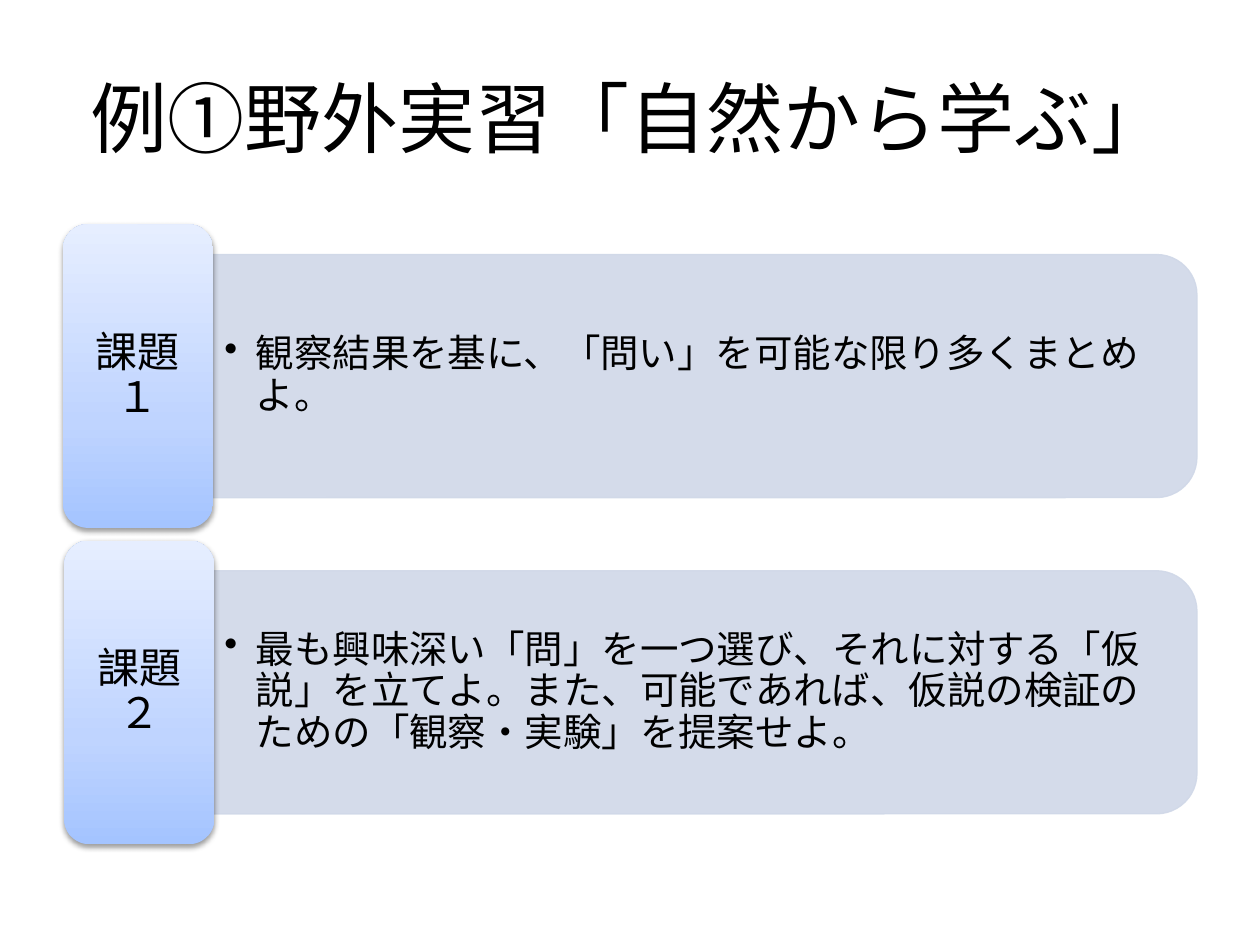
from dataclasses import dataclass

import pptx
import pptx.dml.color
import pptx.enum.shapes
import pptx.enum.text
import pptx.oxml
import pptx.oxml.ns
import pptx.util
from pptx.util import Inches

FONT = "Cabin"
COLORS = {
    "text": "000000",
    "panel": "D0D8E8",
    "tab_bottom": "A4C4FF",
    "tab_middle": "BFD4FF",
    "tab_top": "E6EEFF",
    "shadow": "000000",
}
NS = pptx.oxml.ns.nsdecls("a")
SHAPE = pptx.enum.shapes.MSO_SHAPE
ALIGN = pptx.enum.text.PP_ALIGN
MIDDLE = pptx.enum.text.MSO_ANCHOR.MIDDLE

TAB_W, TAB_H = 1.19, 2.41
PANEL_W, PANEL_H = 7.81, 1.93
PANEL_LEFT = 1.69
FIRST_CENTER, PITCH = 2.985, 2.51


@dataclass
class Task:
    label: str
    body: str
    tab_left: float


TASKS = [
    Task("課題１", "観察結果を基に、「問い」を可能な限り多くまとめよ。", 0.5),
    Task(
        "課題２",
        "最も興味深い「問」を一つ選び、それに対する「仮説」を立てよ。"
        "また、可能であれば、仮説の検証のための「観察・実験」を提案せよ。",
        0.51,
    ),
]


def rgb(name: str) -> pptx.dml.color.RGBColor:
    return pptx.dml.color.RGBColor.from_string(COLORS[name])


def write(sp, text: str, *, size: float, align=ALIGN.LEFT, spacing=None, bullet=False) -> None:
    tf = sp.text_frame
    tf.word_wrap = True
    tf.vertical_anchor = MIDDLE
    p = tf.paragraphs[0]
    p.alignment = align
    p.line_spacing = spacing
    r = p.add_run()
    r.text = text
    r.font.name = FONT
    r.font.size = pptx.util.Pt(size)
    r.font.color.rgb = rgb("text")
    if bullet:
        p.level = 1
        pPr = p._p.get_or_add_pPr()
        pPr.set("marL", str(Inches(0.25)))
        pPr.set("indent", str(-Inches(0.25)))
        pPr.append(pptx.oxml.parse_xml(f'<a:buChar {NS} char="•"/>'))


def add_text(s, left: float, center: float, width: float, height: float, text: str, **fmt):
    sp = s.shapes.add_textbox(
        Inches(left), Inches(center - height / 2), Inches(width), Inches(height)
    )
    write(sp, text, **fmt)
    return sp


def add_panel(s, center: float) -> None:
    """Add a bar rounded at its right end: a top-rounded shape turned by 90 degrees."""
    sp = s.shapes.add_shape(
        SHAPE.ROUND_2_SAME_RECTANGLE,
        Inches(PANEL_LEFT + (PANEL_W - PANEL_H) / 2),
        Inches(center - PANEL_W / 2),
        Inches(PANEL_H),
        Inches(PANEL_W),
    )
    sp.rotation = 90
    sp.shadow.inherit = False
    sp.fill.solid()
    sp.fill.fore_color.rgb = rgb("panel")
    sp.line.color.rgb = rgb("panel")
    sp.line.width = pptx.util.Pt(0.75)
    for color in sp._element.spPr.iter(pptx.oxml.ns.qn("a:srgbClr")):
        color.append(pptx.oxml.parse_xml(f'<a:alpha {NS} val="90000"/>'))


def add_tab(s, left: float, center: float) -> None:
    """Add a rounded tab with a vertical gradient and a soft shadow below."""
    sp = s.shapes.add_shape(
        SHAPE.ROUNDED_RECTANGLE,
        Inches(left), Inches(center - TAB_H / 2), Inches(TAB_W), Inches(TAB_H),
    )
    sp.line.fill.background()
    sp.shadow.inherit = False
    spPr = sp._element.spPr
    stops = "".join(
        f'<a:gs pos="{pos * 1000}"><a:srgbClr val="{COLORS[name]}"/></a:gs>'
        for pos, name in ((0, "tab_bottom"), (35, "tab_middle"), (100, "tab_top"))
    )
    spPr.find(pptx.oxml.ns.qn("a:prstGeom")).addnext(pptx.oxml.parse_xml(
        f'<a:gradFill {NS} rotWithShape="1"><a:gsLst>{stops}</a:gsLst>'
        '<a:lin ang="16200000" scaled="0"/></a:gradFill>'
    ))
    spPr.find(pptx.oxml.ns.qn("a:effectLst")).append(pptx.oxml.parse_xml(
        f'<a:outerShdw {NS} blurRad="{pptx.util.Pt(3.1)}" dist="{pptx.util.Pt(1.6)}" '
        f'dir="5400000" rotWithShape="0"><a:srgbClr val="{COLORS["shadow"]}">'
        '<a:alpha val="38000"/></a:srgbClr></a:outerShdw>'
    ))


def add_task(s, task: Task, center: float) -> None:
    add_panel(s, center)
    body = add_text(s, PANEL_LEFT, center, 7.71, 1.74, task.body,
                    size=22, spacing=0.9, bullet=True)
    body.text_frame.margin_left = body.text_frame.margin_right = Inches(0.09)
    add_tab(s, task.tab_left, center)
    add_text(s, task.tab_left + 0.06, center, 1.07, 2.3, task.label,
             size=24, align=ALIGN.CENTER, spacing=0.9)


def main() -> None:
    prs = pptx.Presentation()
    prs.slide_width, prs.slide_height = Inches(10), Inches(7.5)
    s = prs.slides.add_slide(prs.slide_layouts[5])
    title = s.shapes.title
    title.left, title.top = Inches(0.5), Inches(0.3)
    title.width, title.height = Inches(9), Inches(1.25)
    write(title, "例①野外実習「自然から学ぶ」", size=44, align=ALIGN.CENTER)
    for i, task in enumerate(TASKS):
        add_task(s, task, FIRST_CENTER + i * PITCH)
    prs.save("out.pptx")


if __name__ == "__main__":
    main()
